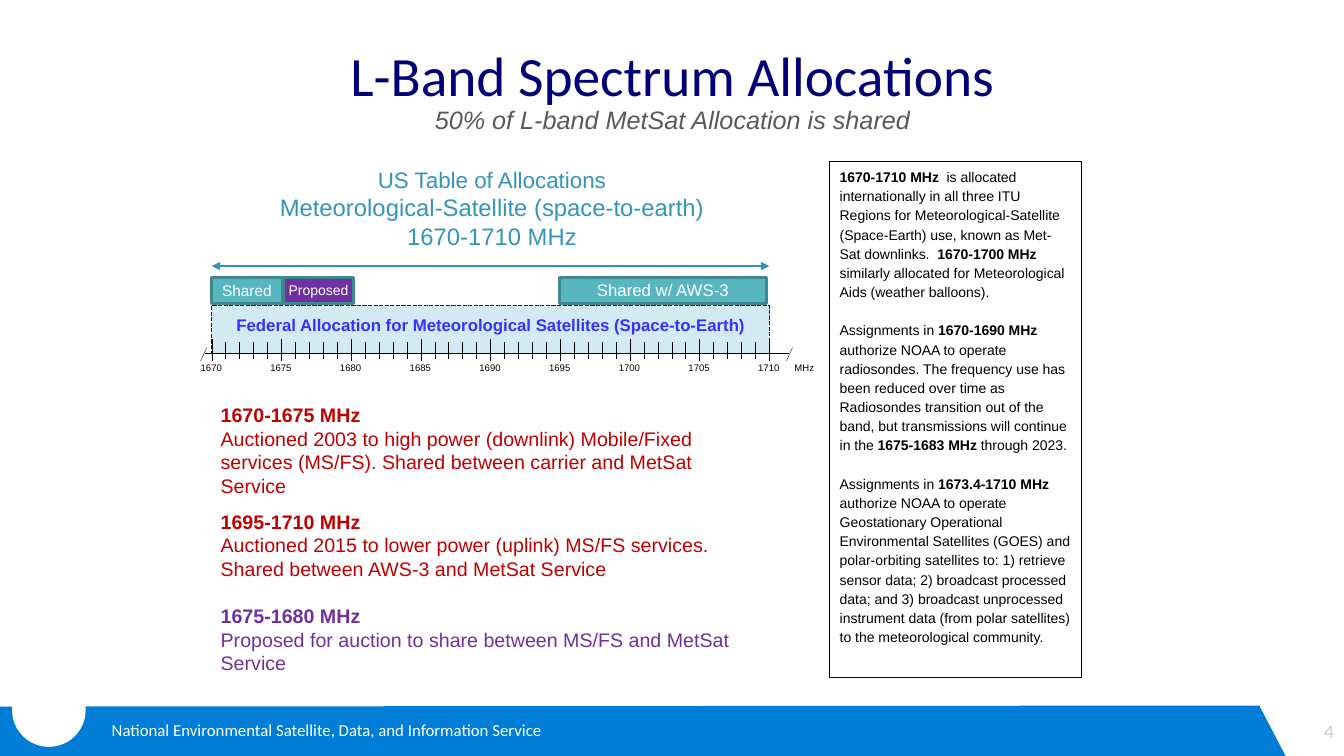
from copy import deepcopy

from lxml.etree import SubElement
from pptx import Presentation
from pptx.dml.color import RGBColor
from pptx.enum.dml import MSO_LINE
from pptx.enum.shapes import MSO_CONNECTOR, MSO_SHAPE
from pptx.enum.text import MSO_ANCHOR, PP_ALIGN
from pptx.oxml.ns import qn
from pptx.util import Inches, Pt

BLACK = RGBColor(0x00, 0x00, 0x00)
WHITE = RGBColor(0xFF, 0xFF, 0xFF)
NAVY = RGBColor(0x01, 0x00, 0x78)
GRAY = RGBColor(0x59, 0x59, 0x59)
LIGHT_GRAY = RGBColor(0xCC, 0xCC, 0xCC)
FOOTER_BLUE = RGBColor(0x00, 0x7D, 0xD6)
ARROW_BLUE = RGBColor(0x30, 0x92, 0xB9)
HEADING_BLUE = RGBColor(0x34, 0x94, 0xBA)
BAND_FILL = RGBColor(0xD4, 0xEA, 0xF3)
BAND_LINE = RGBColor(0x00, 0x00, 0xFF)
BAND_TEXT = RGBColor(0x33, 0x33, 0xFF)
TEAL = RGBColor(0x58, 0xB6, 0xC0)
DARK_TEAL = RGBColor(0x41, 0x87, 0x8E)
PURPLE = RGBColor(0x70, 0x30, 0xA0)
RED = RGBColor(0xC0, 0x00, 0x00)

FIRST_MHZ, LAST_MHZ = 1670, 1710

ALLOCATION_NOTES = [
    "*1670-1710 MHz  *is allocated internationally in all three ITU Regions for "
    "Meteorological-Satellite (Space-Earth) use, known as Met-Sat downlinks.  "
    "*1670-1700 MHz *similarly allocated for Meteorological Aids (weather balloons).",
    "Assignments in *1670-1690 MHz *authorize NOAA to operate radiosondes. The "
    "frequency use has been reduced over time as Radiosondes transition out of the "
    "band, but transmissions will continue in the *1675-1683 MHz *through 2023.",
    "Assignments in *1673.4-1710 MHz* authorize NOAA to operate Geostationary "
    "Operational Environmental Satellites (GOES) and polar-orbiting satellites to: "
    "1) retrieve sensor data; 2) broadcast processed data; and 3) broadcast "
    "unprocessed instrument data (from polar satellites) to the meteorological "
    "community.",
]
# Band, description, colour, gap above in points
SHARED_BANDS = [
    ("1670-1675 MHz", "Auctioned 2003 to high power (downlink) Mobile/Fixed services "
     "(MS/FS). Shared between carrier and MetSat Service", RED, 0),
    ("1695-1710 MHz", "Auctioned 2015 to lower power (uplink) MS/FS services. "
     "Shared between AWS-3 and MetSat Service", RED, 9),
    ("1675-1680 MHz", "Proposed for auction to share between MS/FS and MetSat "
     "Service", PURPLE, 16.8),
]


def set_font(font, size, color, name="Arial", bold=False):
    font.size, font.name, font.bold = Pt(size), name, bold
    font.color.rgb = color


def write(paragraph, text, size, color, name="Arial", align=PP_ALIGN.LEFT, gap=0):
    """Fill a paragraph; text between asterisks is bold."""
    paragraph.alignment = align
    if gap:
        paragraph.space_before = Pt(gap)
    for index, piece in enumerate(text.split("*")):
        if piece:
            run = paragraph.add_run()
            run.text = piece
            set_font(run.font, size, color, name, bold=index % 2 == 1)


def next_paragraph(text_frame):
    first = text_frame.paragraphs[0]
    return text_frame.add_paragraph() if first.runs else first


def add_text_frame(slide, box, anchor=MSO_ANCHOR.TOP, margins=(0.1, 0.05), wrap=True):
    text_frame = slide.shapes.add_textbox(*map(Inches, box)).text_frame
    text_frame.word_wrap = wrap
    text_frame.vertical_anchor = anchor
    text_frame.margin_left = text_frame.margin_right = Inches(margins[0])
    text_frame.margin_top = text_frame.margin_bottom = Inches(margins[1])
    return text_frame


def paint(shape, fill=None, line=None, width=1):
    shape.shadow.inherit = False
    if fill is None:
        shape.fill.background()
    else:
        shape.fill.solid()
        shape.fill.fore_color.rgb = fill
    if line is None:
        shape.line.fill.background()
    else:
        shape.line.color.rgb = line
        shape.line.width = Pt(width)


def add_box(slide, box, fill=None, line=None, width=1, kind=MSO_SHAPE.RECTANGLE):
    shape = slide.shapes.add_shape(kind, *map(Inches, box))
    paint(shape, fill, line, width)
    return shape


def add_line(slide, start, end, color=BLACK, width=0.25, arrows=False):
    connector = slide.shapes.add_connector(
        MSO_CONNECTOR.STRAIGHT, *map(Inches, (*start, *end)))
    connector.line.color.rgb = color
    connector.line.width = Pt(width)
    if arrows:
        for tag in ("a:headEnd", "a:tailEnd"):
            SubElement(connector.line._get_or_add_ln(), qn(tag), type="triangle")
    SubElement(connector._element.spPr, qn("a:effectLst"))


def add_title(slide, box):
    title = slide.shapes.title
    title.left, title.top, title.width, title.height = map(Inches, box)
    title.text_frame.vertical_anchor = MSO_ANCHOR.MIDDLE
    paragraph = title.text_frame.paragraphs[0]
    paragraph.text = "L-Band Spectrum Allocations\v50% of L-band MetSat Allocation is shared"
    paragraph.alignment = PP_ALIGN.CENTER
    paragraph.line_spacing = 0.9
    heading, subtitle = paragraph.runs
    set_font(heading.font, 39.6, NAVY, "Calibri")
    set_font(subtitle.font, 18, GRAY)
    subtitle.font.italic = True
    line_break = paragraph._p.find(qn("a:br"))
    line_break.insert(0, deepcopy(heading._r.rPr))


def add_footer(slide, left, top, width, height):
    bottom = top + height
    corners = [(left, top + 0.01), (left + width - 0.26, top),
               (left + width, bottom), (left, bottom)]
    points = [(Inches(x), Inches(y)) for x, y in corners]
    builder = slide.shapes.build_freeform(*points[0], scale=1.0)
    builder.add_line_segments(points[1:], close=True)
    paint(builder.convert_to_shape(), FOOTER_BLUE)
    add_box(slide, (left + 0.12, top - 0.32, 0.73, 0.73), WHITE, kind=MSO_SHAPE.OVAL)
    agency = add_text_frame(slide, (left + 1.01, top + 0.09, 8.38, 0.3))
    write(agency.paragraphs[0],
          "National Environmental Satellite, Data, and Information Service",
          12, WHITE, "Calibri")
    number = add_text_frame(slide, (left + 12.43, top + 0.05, 0.9, 0.4), MSO_ANCHOR.MIDDLE)
    write(number.paragraphs[0], "4", 14, LIGHT_GRAY, "Calibri", PP_ALIGN.RIGHT)


def add_notes_panel(slide, box):
    text_frame = add_box(slide, box, line=BLACK, width=0.75).text_frame
    text_frame.word_wrap = True
    text_frame.vertical_anchor = MSO_ANCHOR.TOP
    for index, note in enumerate(ALLOCATION_NOTES):
        paragraph = next_paragraph(text_frame)
        write(paragraph, note, 10, BLACK, gap=13.7 if index else 0)
        paragraph.line_spacing = 1.14


def add_shared_bands(slide, box):
    text_frame = add_text_frame(slide, box, MSO_ANCHOR.MIDDLE)
    for band, description, color, gap in SHARED_BANDS:
        write(next_paragraph(text_frame), f"*{band}*", 14, color, gap=gap)
        write(next_paragraph(text_frame), description, 14, color)


def add_scale(slide, left, axis, width):
    """Draw the frequency axis at height axis, with ticks and labels."""
    step = width / (LAST_MHZ - FIRST_MHZ)
    for mhz in range(FIRST_MHZ, LAST_MHZ + 1):
        x = left + (mhz - FIRST_MHZ) * step
        major = mhz % 5 == 0
        add_line(slide, (x, axis + (0.07 if major else 0.05)),
                 (x, axis - (0.15 if major else 0.12)))
        if major:
            label = add_text_frame(slide, (x - 0.11, axis + 0.08, 0.23, 0.11),
                                   margins=(0, 0), wrap=False)
            write(label.paragraphs[0], str(mhz), 6.8, BLACK)
    unit = add_text_frame(slide, (left + width + 0.25, axis + 0.08, 0.2, 0.11),
                          margins=(0, 0), wrap=False)
    write(unit.paragraphs[0], "MHz", 6.8, BLACK)
    for x in (left - 0.05, left + width + 0.23):
        add_line(slide, (x, axis - 0.06), (x - 0.06, axis + 0.07))
    add_line(slide, (left - 0.07, axis), (left + width + 0.2, axis), width=1)


def add_spectrum(slide, left, top, width):
    heading = add_text_frame(slide, (left + 0.1, top, 5.36, 0.94))
    for text, size in (("US Table of Allocations", 16),
                       ("Meteorological-Satellite (space-to-earth)", 17),
                       ("1670-1710 MHz", 17)):
        write(next_paragraph(heading), text, size, HEADING_BLUE, align=PP_ALIGN.CENTER)
    add_line(slide, (left, top + 1.04), (left + width, top + 1.04), ARROW_BLUE, 1.5, True)

    band = add_box(slide, (left, top + 1.43, width, 0.48), BAND_FILL, BAND_LINE)
    band.line.dash_style = MSO_LINE.SQUARE_DOT
    add_scale(slide, left, top + 1.91, width)
    caption = add_text_frame(slide, (left + 0.14, top + 1.52, 5.26, 0.2), margins=(0, 0))
    write(caption.paragraphs[0],
          "*Federal Allocation for Meteorological Satellites (Space-to-Earth)*",
          12, BAND_TEXT, align=PP_ALIGN.CENTER)

    for text, offset, block_width, fill, size in (
            ("Shared", 0, 0.7, TEAL, 11),
            ("Shared w/ AWS-3", 3.45, 2.05, TEAL, 12),
            ("Proposed", 0.71, 0.7, PURPLE, 10)):
        block = add_box(slide, (left + offset, top + 1.15, block_width, 0.26),
                        fill, DARK_TEAL, 2)
        block.text_frame.margin_left = block.text_frame.margin_right = Inches(0.05)
        block.text_frame.vertical_anchor = MSO_ANCHOR.MIDDLE
        write(block.text_frame.paragraphs[0], text, size, WHITE, align=PP_ALIGN.CENTER)


def main():
    presentation = Presentation()
    presentation.slide_width, presentation.slide_height = Inches(13.33), Inches(7.5)
    slide = presentation.slides.add_slide(presentation.slide_layouts[5])
    add_footer(slide, 0, 7, 12.75, 0.5)
    add_title(slide, (0.92, 0.4, 11.5, 1.02))
    add_notes_panel(slide, (8.23, 1.6, 2.5, 5.12))
    add_shared_bands(slide, (2.09, 3.98, 5.55, 2.73))
    add_spectrum(slide, 2.1, 1.6, 5.53)
    presentation.save("out.pptx")


if __name__ == "__main__":
    main()
